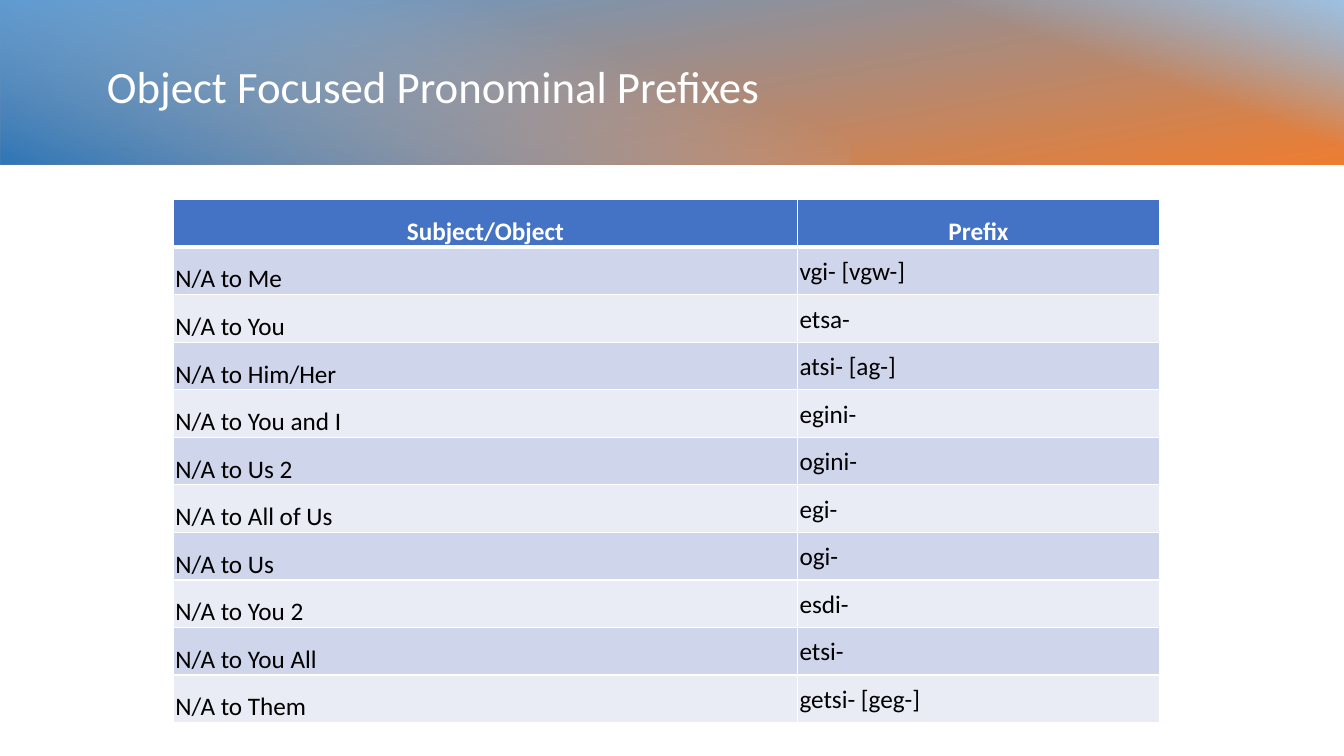
from dataclasses import dataclass

from lxml.etree import SubElement
from pptx import Presentation
from pptx.dml.color import RGBColor
from pptx.enum.shapes import MSO_SHAPE
from pptx.enum.text import MSO_ANCHOR, PP_ALIGN
from pptx.oxml.ns import qn
from pptx.shapes.group import GroupShape
from pptx.slide import Slide
from pptx.table import _Cell
from pptx.util import Inches, Pt

FONT = "Calibri"
WHITE = RGBColor(0xFF, 0xFF, 0xFF)
BLACK = RGBColor(0x00, 0x00, 0x00)
HEAD = RGBColor(0x44, 0x72, 0xC4)
DARK = RGBColor(0xCF, 0xD5, 0xEA)
LIGHT = RGBColor(0xE9, 0xEB, 0xF5)
BLUE = RGBColor(0x5B, 0x9B, 0xD5)
ORANGE = RGBColor(0xED, 0x7D, 0x31)
PALE = RGBColor(0x9D, 0xC3, 0xE6)
DEEP = RGBColor(0x2E, 0x75, 0xB6)

BAND_TOP, BAND_HIGH = -0.03, 1.66
TABLE_HIGH = 5.19
WIDTHS = (6.19, 3.59)
ROWS = (
    ("Subject/Object", "Prefix"),
    ("N/A to Me", "vgi- [vgw-]"),
    ("N/A to You", "etsa-"),
    ("N/A to Him/Her", "atsi- [ag-]"),
    ("N/A to You and I", "egini-"),
    ("N/A to Us 2", "ogini-"),
    ("N/A to All of Us", "egi-"),
    ("N/A to Us", "ogi-"),
    ("N/A to You 2", "esdi-"),
    ("N/A to You All", "etsi-"),
    ("N/A to Them", "getsi- [geg-]"),
)


@dataclass
class Stop:
    place: int
    color: RGBColor
    alpha: int = 100


@dataclass
class Band:
    left: float
    width: float
    turn: int
    angle: int
    stops: tuple[Stop, Stop]


BANDS = (
    Band(0, 13.34, 270, 170, (Stop(0, BLUE), Stop(100, ORANGE))),
    Band(7.8, 5.54, 270, 20, (Stop(59, PALE, 0), Stop(100, PALE))),
    Band(0, 8.44, 90, 20, (Stop(29, PALE, 0), Stop(100, DEEP))),
)


def draw_band(group: GroupShape, band: Band) -> None:
    """Add a quarter-turned rectangle whose gradient turns with it."""
    shift = (band.width - BAND_HIGH) / 2
    shape = group.shapes.add_shape(
        MSO_SHAPE.RECTANGLE, Inches(band.left + shift), Inches(BAND_TOP - shift),
        Inches(BAND_HIGH), Inches(band.width))
    shape.rotation = band.turn
    shape.shadow.inherit = False
    shape.line.fill.background()
    shape.fill.gradient()
    grad = shape._element.spPr.find(qn("a:gradFill"))
    for child in list(grad):
        grad.remove(child)
    grad.set("rotWithShape", "1")
    stops = SubElement(grad, qn("a:gsLst"))
    for stop in band.stops:
        mark = SubElement(stops, qn("a:gs"), pos=str(stop.place * 1000))
        color = SubElement(mark, qn("a:srgbClr"), val=str(stop.color))
        if stop.alpha < 100:
            SubElement(color, qn("a:alpha"), val=str(stop.alpha * 1000))
    SubElement(grad, qn("a:lin"), ang=str(band.angle * 60000), scaled="0")


def draw_title(slide: Slide) -> None:
    title = slide.shapes.title
    title.left, title.top = Inches(0.96), Inches(0.33)
    title.width, title.height = Inches(11.46), Inches(1.1)
    title.text_frame.vertical_anchor = MSO_ANCHOR.MIDDLE
    para = title.text_frame.paragraphs[0]
    para.alignment = PP_ALIGN.LEFT
    para.line_spacing = 0.9
    run = para.add_run()
    run.text = "Object Focused Pronominal Prefixes"
    run.font.name, run.font.size = FONT, Pt(32)
    run.font.color.rgb = WHITE


def add_edges(cell: _Cell, row: int) -> None:
    """Draw white cell borders, thick between header and body."""
    thick = {"T": row == 1, "B": row == 0}
    for side in "LRTB":
        width = Pt(3 if thick.get(side) else 1)
        line = SubElement(cell._tc.get_or_add_tcPr(), qn(f"a:ln{side}"), w=str(width))
        fill = SubElement(line, qn("a:solidFill"))
        SubElement(fill, qn("a:srgbClr"), val=str(WHITE))


def fill_cell(cell: _Cell, text: str, row: int, col: int) -> None:
    head = row == 0
    add_edges(cell, row)
    cell.fill.solid()
    cell.fill.fore_color.rgb = HEAD if head else DARK if row % 2 else LIGHT
    cell.margin_left = cell.margin_right = cell.margin_top = Inches(0.02)
    cell.margin_bottom = 0
    cell.vertical_anchor = MSO_ANCHOR.BOTTOM if head or col == 0 else MSO_ANCHOR.MIDDLE
    para = cell.text_frame.paragraphs[0]
    para.alignment = PP_ALIGN.CENTER if head else PP_ALIGN.LEFT
    run = para.add_run()
    run.text = text
    run.font.name, run.font.size, run.font.bold = FONT, Pt(18), head
    run.font.color.rgb = WHITE if head else BLACK


def draw_table(slide: Slide) -> None:
    table = slide.shapes.add_table(
        len(ROWS), len(WIDTHS), Inches(1.72), Inches(1.98),
        Inches(sum(WIDTHS)), Inches(TABLE_HIGH)).table
    for col, width in enumerate(WIDTHS):
        table.columns[col].width = Inches(width)
    for row, texts in enumerate(ROWS):
        table.rows[row].height = Inches(TABLE_HIGH / len(ROWS))
        for col, text in enumerate(texts):
            fill_cell(table.cell(row, col), text, row, col)


def main() -> None:
    deck = Presentation()
    deck.slide_width, deck.slide_height = Inches(13.33), Inches(7.5)
    slide = deck.slides.add_slide(deck.slide_layouts[5])
    group = slide.shapes.add_group_shape()
    for band in BANDS:
        draw_band(group, band)
    # The title must lie in front of the bands.
    group._element.addnext(slide.shapes.title._element)
    draw_title(slide)
    draw_table(slide)
    deck.save("out.pptx")


if __name__ == "__main__":
    main()
